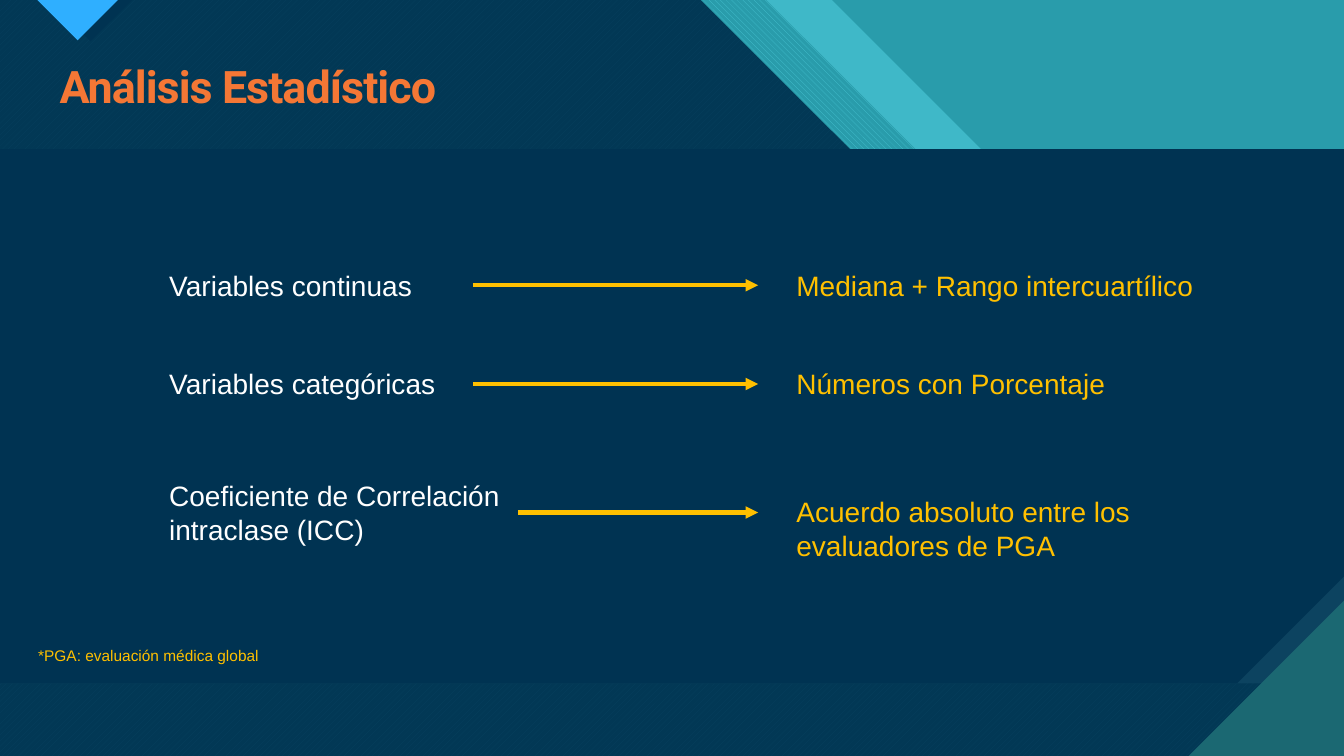
from pptx import Presentation
from pptx.dml.color import RGBColor as Rgb
from pptx.enum.dml import MSO_PATTERN as Pat
from pptx.enum.shapes import MSO_CONNECTOR as Link, MSO_SHAPE as Form
from pptx.enum.text import MSO_ANCHOR as Anchor, MSO_AUTO_SIZE as Fit, PP_ALIGN as Align
from pptx.oxml.ns import qn
from pptx.util import Inches, Pt
from lxml.etree import SubElement as Sub

HUES = {
    "teal": "299CAB", "aqua": "47C3D3", "deep": "1B6872",
    "navy": "003352", "slate": "0C4360", "blue": "2FAFFF",
    "orange": "F47735", "gold": "FFC000", "white": "FFFFFF",
}
WIDE, HIGH = 13.33, 7.5
BAND, PANEL = 1.48, 5.3


class Page:
    def __init__(self, deck):
        self.slide = deck.slides.add_slide(deck.slide_layouts[5])
        self.shapes = self.slide.shapes
        self.font = "Arial"

    def hue(self, name):
        return Rgb.from_string(HUES[name])

    def base(self, name):
        fill = self.slide.background.fill
        fill.solid()
        fill.fore_color.rgb = self.hue(name)

    def paint(self, shape, name, back=None, pat=None, alpha=None):
        shape.shadow.inherit = False
        shape.line.fill.background()
        fill = shape.fill
        if pat:
            fill.patterned()
            fill.pattern = pat
            fill.back_color.rgb = self.hue(back)
        else:
            fill.solid()
        fill.fore_color.rgb = self.hue(name)
        if alpha:
            tint = next(shape.element.spPr.iter(qn("a:srgbClr")))
            Sub(tint, qn("a:alpha"), val=str(alpha * 1000))

    def poly(self, spots, name, **style):
        spots = [(Inches(x), Inches(y)) for x, y in spots]
        pen = self.shapes.build_freeform(*spots[0], scale=1.0)
        pen.add_line_segments(spots[1:], close=True)
        self.paint(pen.convert_to_shape(), name, **style)

    def panel(self, form, name, snip=None):
        box = [Inches(n) for n in (0, BAND, WIDE, PANEL)]
        shape = self.shapes.add_shape(form, *box)
        if snip:
            shape.adjustments[0] = snip
            shape.element.spPr.find(qn("a:xfrm")).set("flipV", "1")
        self.paint(shape, name)

    def label(self, shape, text, name, form):
        frame = shape.text_frame
        frame.text = text
        frame.word_wrap = True
        frame.auto_size = Fit.SHAPE_TO_FIT_TEXT
        font = frame.paragraphs[0].runs[0].font
        for key, val in form.items():
            setattr(font, key, val)
        font.color.rgb = self.hue(name)

    def title(self, text, box, name):
        shape = self.shapes.title
        for key, val in zip(("left", "top", "width", "height"), box):
            setattr(shape, key, Inches(val))
        form = {"name": "Roboto", "size": Pt(32), "bold": True}
        self.label(shape, text, name, form)
        next(shape.element.iter(qn("a:rPr"))).set("spc", "-70")
        shape.text_frame.vertical_anchor = Anchor.MIDDLE
        for key, val in {"alignment": Align.LEFT, "line_spacing": 0.9}.items():
            setattr(shape.text_frame.paragraphs[0], key, val)
        shape.element.getparent().append(shape.element)

    def text(self, text, box, name, size=20):
        shape = self.shapes.add_textbox(*map(Inches, box))
        self.label(shape, text, name, {"name": self.font, "size": Pt(size)})

    def arrow(self, start, end, y, name):
        ends = [Inches(n) for n in (start, y, end, y)]
        link = self.shapes.add_connector(Link.STRAIGHT, *ends)
        link.line.width = Pt(3)
        link.line.color.rgb = self.hue(name)
        props = link.element.spPr
        Sub(props.find(qn("a:ln")), qn("a:tailEnd"), type="triangle")
        Sub(props, qn("a:effectLst"))


def slope(edge):
    return [(0, 0), (edge, 0), (edge + 2.97, 2.97), (edge + 4.23, 2.97),
            (WIDE, 12.07 - edge), (WIDE, HIGH), (0, HIGH)]


def main():
    deck = Presentation()
    deck.slide_width, deck.slide_height = Inches(WIDE), Inches(HIGH)
    page = Page(deck)
    page.base("teal")

    page.poly(slope(8.25), "aqua", alpha=74)
    page.poly(slope(7.6), "aqua", back="teal", pat=Pat.WIDE_DOWNWARD_DIAGONAL)
    page.poly(slope(6.95), "aqua", back="deep", pat=Pat.WIDE_UPWARD_DIAGONAL)
    page.poly(slope(6.95), "navy", alpha=90)
    page.poly([(0.48, 0), (1.31, 0), (0.9, 0.41)], "navy")
    page.poly([(0.37, 0), (1.17, 0), (0.77, 0.4)], "blue")
    page.panel(Form.RECTANGLE, "slate")
    page.panel(Form.SNIP_1_RECTANGLE, "navy", 0.2)
    page.poly([(11.79, HIGH), (WIDE, HIGH), (WIDE, 5.96)], "deep")

    page.title("Análisis Estadístico", (0.49, 0.59, 12.26, 0.59), "orange")
    rows = [
        ("Variables continuas", (1.58, 2.61, 3.11, 0.44), 4.69,
         "Mediana + Rango intercuartílico", 2.61),
        ("Variables categóricas", (1.58, 3.59, 3.11, 0.44), 4.69,
         "Números con Porcentaje", 3.59),
        ("Coeficiente de Correlación intraclase (ICC)", (1.58, 4.7, 3.73, 0.77), 5.14,
         "Acuerdo absoluto entre los evaluadores de PGA", 4.86),
    ]
    for name, box, start, result, top in rows:
        high = box[3]
        page.text(name, box, "white")
        page.arrow(start, 7.52, box[1] + high / 2, "gold")
        page.text(result, (7.8, top, 4.19, high), "gold")
    page.text("*PGA: evaluación médica global", (0.28, 6.36, 4.19, 0.29), "gold", 11)
    deck.save("out.pptx")


if __name__ == "__main__":
    main()
